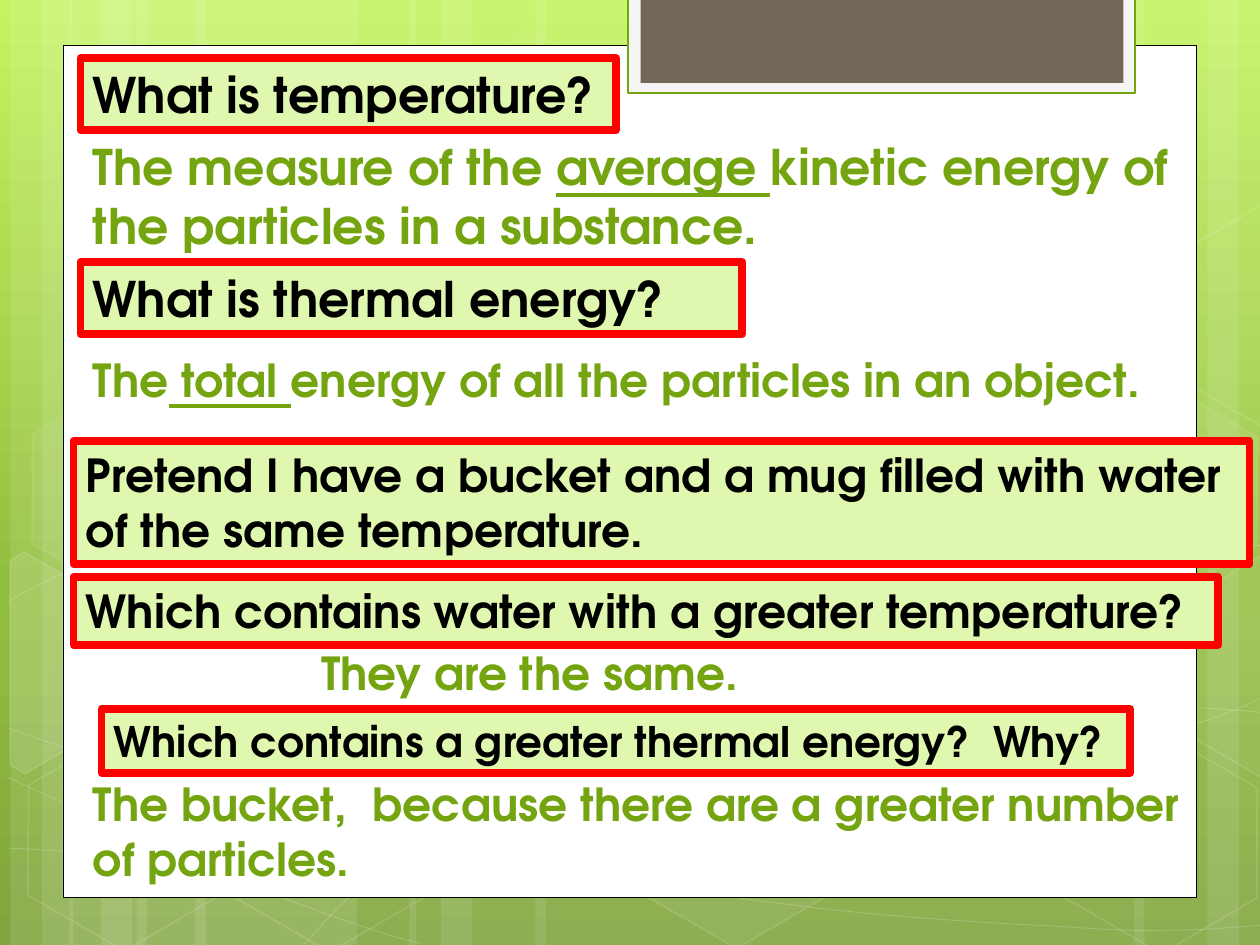
from copy import deepcopy
from dataclasses import dataclass
from math import cos, radians, sin
from typing import NamedTuple, Optional

from lxml.etree import SubElement
from pptx import Presentation
from pptx.dml.color import RGBColor
from pptx.enum.shapes import MSO_SHAPE as Preset
from pptx.enum.text import MSO_ANCHOR as Anchor, MSO_AUTO_SIZE as AutoSize, PP_ALIGN as Align
from pptx.oxml.ns import qn
from pptx.util import Pt

WHITE = RGBColor(0xFF, 0xFF, 0xFF)
BLACK = RGBColor(0x00, 0x00, 0x00)
RED = RGBColor(0xFF, 0x00, 0x00)
GREEN = RGBColor(0x74, 0xA5, 0x10)
PALE_GREEN = RGBColor(0xDF, 0xF7, 0xAE)
OFF_WHITE = RGBColor(0xF5, 0xF5, 0xF5)
BROWN = RGBColor(0x71, 0x68, 0x5A)
GRADIENT = (
    (0, RGBColor(0xC3, 0xF3, 0x5F)),
    (0.62, RGBColor(0x93, 0xBF, 0x3F)),
    (1, RGBColor(0x81, 0xA5, 0x3E)),
)
FONT = "TeX Gyre Adventor"
TILT = 30
Point = tuple[float, float]


class Box(NamedTuple):
    left: float
    top: float
    width: float
    height: float


class Style(NamedTuple):
    fill: Optional[RGBColor] = None
    line: Optional[RGBColor] = None
    weight: float = 1
    fill_alpha: int = 100
    line_alpha: int = 100


class Hexagon(NamedTuple):
    left: float
    top: float
    fill_alpha: int
    line_alpha: int


class CutHexagon(NamedTuple):
    center: Point
    points: tuple[Point, ...]
    fill_alpha: int


@dataclass(frozen=True)
class Statement:
    box: Box
    size: int
    runs: tuple[str, ...]
    question: bool = False
    underlined: int = 1


STRIPES = ((72, 126), (0, 36), (18, 60))
MIDDLE_STRIPES = ((72, 222), (0, 36), (18, 60))
RIGHT_EDGE = 726

CURVES = (
    ((5, 484.6), (43.9, 486.7), (82.8, 488.9), (136.8, 488.2), (190.8, 487.4),
     (257.8, 486), (329.8, 478.8), (401.8, 471.6), (504, 457.9), (570.2, 444.2),
     (635.8, 430.6), (703.4, 409), (725, 396.7)),
    ((5, 343.4), (25.9, 331.9), (46.8, 321.1), (87.1, 310.3), (128.2, 299.5),
     (186.5, 283.7), (249.8, 278.6), (313.9, 273.6), (391.7, 272.9), (470.9, 278.6),
     (550.1, 284.4), (681.8, 306.7), (725, 312.5)),
    ((4.3, 444.2), (91.4, 483.8), (177.8, 523.4), (240.5, 539.3)),
    ((5, 416.2), (27.4, 424.1), (50.4, 432), (92.2, 443.5), (133.9, 454.3),
     (196.6, 472.3), (257, 484.6), (316.8, 496.8), (392.4, 509.8), (452.2, 517),
     (511.9, 524.9), (576, 527.8), (614.2, 529.9), (651.6, 532.8), (661.7, 531.4),
     (680.4, 531.4), (699.1, 530.6), (712.1, 529.2), (725, 528.5)),
    ((174.2, 539.3), (187.2, 524.9), (200.2, 510.5), (217.4, 497.5), (234.7, 484.6),
     (259.2, 470.2), (279.4, 460.1), (291.6, 450), (311.8, 445.7), (338.4, 438.5),
     (364.3, 431.3), (412.6, 421.2), (437.8, 416.2), (463.7, 411.1), (467.3, 411.1),
     (489.6, 409.7), (511.2, 407.5), (547.2, 405.4), (571.7, 404.6), (596.9, 403.9),
     (637.9, 404.6), (637.9, 404.6), (637.9, 404.6), (686.2, 404.6), (686.2, 404.6),
     (699.1, 405.4), (711.4, 406.1), (717.8, 406.8), (724.3, 407.5), (722.2, 406.8),
     (724.3, 407.5)),
)

HEXAGONS = (
    Hexagon(240.5, 25.9, 4, 8),
    Hexagon(357.8, 424.1, 6, 12),
    Hexagon(7.9, 425.5, 0, 12),
    Hexagon(10.1, 224.6, 7, 8),
    Hexagon(125.3, 426.2, 0, 12),
    Hexagon(542.2, 326.2, 10, 12),
    Hexagon(600.5, 427, 0, 12),
    Hexagon(600.5, 226.1, 7, 8),
)
LEFT_PART = ((5.8, 320.4), (13.7, 315.4), (69.1, 347), (68.4, 410.4), (14.4, 442.1), (5.8, 437))
RIGHT_PART = ((666.7, 349.2), (720.7, 317.5), (726.5, 321.1),
              (726.5, 441.4), (721.4, 444.2), (666.7, 412.6))
UPPER_RIGHT_PART = tuple((x, y - 200.5) for x, y in RIGHT_PART)
CUT_HEXAGONS = (
    CutHexagon((25.9, 385.2), LEFT_PART, 10),
    CutHexagon((709.2, 374.4), RIGHT_PART, 4),
    CutHexagon((709.2, 173.5), UPPER_RIGHT_PART, 0),
)

STATEMENTS = (
    Statement(Box(46, 33.3, 306, 41.2), 28, ("What is temperature?",), True),
    Statement(Box(46, 74.6, 638, 75), 28,
              ("The measure of the ", "average ",
               "kinetic energy of the particles in a substance.")),
    Statement(Box(46, 149.7, 378, 41.2), 28, ("What is thermal energy?",), True),
    Statement(Box(46, 197.7, 638, 38.8), 26,
              ("The", " total ", "energy of all the particles in an object.")),
    Statement(Box(42, 252, 672, 70.4), 26,
              ("Pretend I have a bucket and a mug filled with water of the same temperature.",), True),
    Statement(Box(42, 329.7, 654, 38.8), 26,
              ("Which contains water with a greater temperature?",), True),
    Statement(Box(176.4, 365, 293, 38.8), 26, ("They are the same.",)),
    Statement(Box(58, 405.3, 588, 36.2), 24,
              ("Which contains a greater thermal energy?  Why?",), True),
    Statement(Box(46, 440, 638, 70.4), 26,
              ("The bucket,  because there are a greater number of particles.",)),
)


def set_paint(fill, color: Optional[RGBColor], alpha: int, parent) -> None:
    if color is None or alpha == 0:
        fill.background()
        return
    fill.solid()
    fill.fore_color.rgb = color
    if alpha < 100:
        color_element = parent.find(f"{qn('a:solidFill')}/{qn('a:srgbClr')}")
        SubElement(color_element, qn("a:alpha"), val=str(alpha * 1000))


def apply_style(shape, style: Style) -> None:
    shape.shadow.inherit = False
    properties = shape.element.spPr
    set_paint(shape.fill, style.fill, style.fill_alpha, properties)
    shape.line.width = Pt(style.weight)
    set_paint(shape.line.fill, style.line, style.line_alpha, properties.find(qn("a:ln")))


def add_preset(slide, box: Box, style: Style, preset=Preset.RECTANGLE):
    shape = slide.shapes.add_shape(preset, *map(Pt, box))
    apply_style(shape, style)
    return shape


def add_outline(slide, points: tuple[Point, ...], style: Style, close: bool):
    scaled = [(Pt(x), Pt(y)) for x, y in points]
    builder = slide.shapes.build_freeform(*scaled[0])
    builder.add_line_segments(scaled[1:], close=close)
    shape = builder.convert_to_shape()
    apply_style(shape, style)
    return shape


def add_curve(slide, nodes: tuple[Point, ...]) -> None:
    shape = add_outline(slide, nodes, Style(None, WHITE, 0.5, line_alpha=20), False)
    outline = shape.element.find(f".//{qn('a:pathLst')}")[0]
    segments = outline.findall(qn("a:lnTo"))
    for index in range(0, len(segments), 3):
        bezier = SubElement(outline, qn("a:cubicBezTo"))
        for segment in segments[index:index + 3]:
            bezier.append(segment[0])
            outline.remove(segment)


def add_cut_hexagon(slide, cut: CutHexagon) -> None:
    cosine, sine = cos(radians(TILT)), sin(radians(TILT))
    center_x, center_y = cut.center
    upright = tuple(
        (center_x + (x - center_x) * cosine + (y - center_y) * sine,
         center_y - (x - center_x) * sine + (y - center_y) * cosine)
        for x, y in cut.points)
    shape = add_outline(slide, upright, Style(WHITE, WHITE, 1, cut.fill_alpha, 12), True)
    shape.rotation = TILT


def paint_background(slide) -> None:
    fill = slide.background.fill
    fill.gradient()
    fill.gradient_angle = 270
    stop_list = slide.element.find(f".//{qn('a:gsLst')}")
    stop_list.append(deepcopy(stop_list[-1]))
    for stop, (position, color) in zip(fill.gradient_stops, GRADIENT):
        stop.position = position
        stop.color.rgb = color


def add_decoration(slide) -> None:
    stripes = [(start + offset, width) for start in (6, 39.6) for offset, width in STRIPES]
    stripes += [(RIGHT_EDGE - offset - width, width) for offset, width in STRIPES]
    stripes += [(234 + offset, width) for offset, width in MIDDLE_STRIPES]
    for left, width in stripes:
        add_preset(slide, Box(left, 0, width, 540), Style(WHITE, fill_alpha=10))
    for curve in CURVES:
        add_curve(slide, curve)
    for left, top, fill_alpha, line_alpha in HEXAGONS:
        style = Style(WHITE, WHITE, 1, fill_alpha, line_alpha)
        hexagon = add_preset(slide, Box(left, top, 126, 109.4), style, Preset.HEXAGON)
        hexagon.adjustments[0] = 0.285
        hexagon.rotation = TILT
    for cut in CUT_HEXAGONS:
        add_cut_hexagon(slide, cut)
    add_preset(slide, Box(36, 25.9, 648, 487), Style(WHITE, BLACK, 0.5))
    add_preset(slide, Box(359, -1.4, 289.6, 54.7), Style(OFF_WHITE, GREEN, 1.25))
    add_preset(slide, Box(366.1, -1.4, 275.9, 48.8), Style(BROWN))


def add_statement(slide, statement: Statement) -> None:
    if statement.question:
        shape = add_preset(slide, statement.box, Style(PALE_GREEN, RED, 4.5))
    else:
        shape = slide.shapes.add_textbox(*map(Pt, statement.box))
    text_frame = shape.text_frame
    text_frame.word_wrap = True
    text_frame.auto_size = AutoSize.SHAPE_TO_FIT_TEXT
    text_frame.vertical_anchor = Anchor.TOP
    paragraph = text_frame.paragraphs[0]
    paragraph.alignment = Align.LEFT
    for index, text in enumerate(statement.runs):
        run = paragraph.add_run()
        run.text = text
        run.font.name = FONT
        run.font.size = Pt(statement.size)
        run.font.bold = True
        run.font.underline = index == statement.underlined
        run.font.color.rgb = BLACK if statement.question else GREEN


def main() -> None:
    presentation = Presentation()
    presentation.slide_width, presentation.slide_height = Pt(720), Pt(540)
    slide = presentation.slides.add_slide(presentation.slide_layouts[6])
    paint_background(slide)
    add_decoration(slide)
    for statement in STATEMENTS:
        add_statement(slide, statement)
    presentation.save("out.pptx")


if __name__ == "__main__":
    main()
